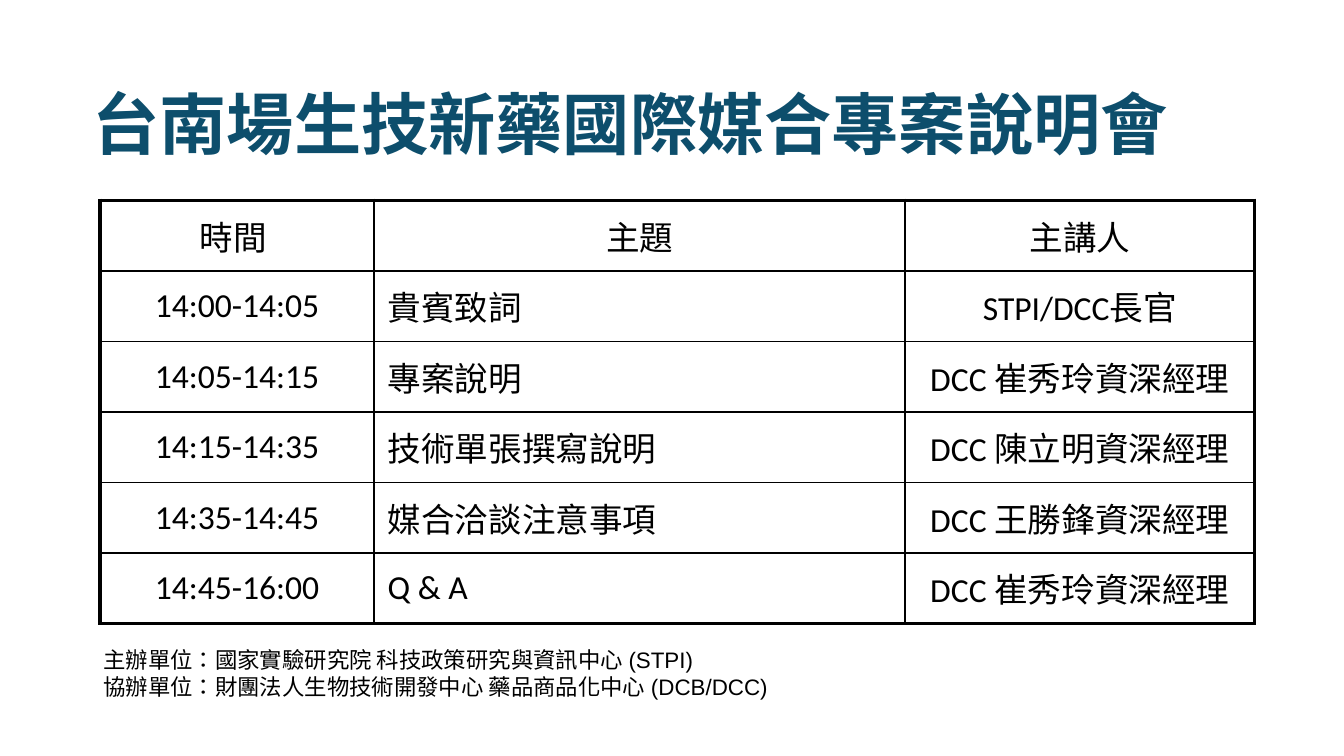
from lxml import etree
from pptx import Presentation
from pptx.dml.color import RGBColor
from pptx.enum.lang import MSO_LANGUAGE_ID
from pptx.enum.text import MSO_ANCHOR, PP_ALIGN
from pptx.oxml.ns import qn
from pptx.util import Inches, Pt

BLACK = RGBColor(0x00, 0x00, 0x00)
TEAL = RGBColor(0x0D, 0x4E, 0x6C)
LEFT, CENTER = PP_ALIGN.LEFT, PP_ALIGN.CENTER
TOP, MIDDLE, BOTTOM = MSO_ANCHOR.TOP, MSO_ANCHOR.MIDDLE, MSO_ANCHOR.BOTTOM
CHINESE = MSO_LANGUAGE_ID.TRADITIONAL_CHINESE
THIN, THICK = Pt(1), Pt(2.25)

TITLE = "台南場生技新藥國際媒合專案說明會"
SPEAKER = "主講人"
AGENDA = [
    ("時間 ", "主題", SPEAKER),
    ("14:00-14:05", "貴賓致詞", "STPI/DCC長官"),
    ("14:05-14:15", "專案說明", "DCC 崔秀玲資深經理"),
    ("14:15-14:35", "技術單張撰寫說明", "DCC 陳立明資深經理"),
    ("14:35-14:45", "媒合洽談注意事項", "DCC 王勝鋒資深經理"),
    ("14:45-16:00", "Q & A", "DCC 崔秀玲資深經理"),
]
ORGANISERS = [
    "主辦單位：國家實驗研究院 科技政策研究與資訊中心 (STPI)",
    "協辦單位：財團法人生物技術開發中心 藥品商品化中心 (DCB/DCC)",
]


class AgendaSlide:
    """Draws styled elements on one slide, with lengths in percent of its size."""

    def __init__(self, deck):
        self.width, self.height = deck.slide_width, deck.slide_height
        self.shapes = deck.slides.add_slide(deck.slide_layouts[6]).shapes

    def across(self, percent):
        return round(self.width * percent / 100)

    def down(self, percent):
        return round(self.height * percent / 100)

    def area(self, left, top, width, height):
        return self.across(left), self.down(top), self.across(width), self.down(height)

    def style(self, para, size, name="Calibri", color=BLACK, bold=False):
        font = para.font
        font.size, font.name, font.bold = Pt(size), name, bold
        font.color.rgb = color
        for span in para.runs:
            span.font.language_id = CHINESE

    def text(self, area, lines, anchor=TOP, spacing=1.0, **style):
        frame = self.shapes.add_textbox(*self.area(*area)).text_frame
        frame.word_wrap = True
        frame.vertical_anchor = anchor
        frame.text = "\n".join(lines)
        for para in frame.paragraphs:
            para.line_spacing = spacing
            self.style(para, **style)

    def border(self, cell, widths):
        properties = cell._tc.get_or_add_tcPr()
        for side, width in zip("LRTB", widths):
            line = etree.SubElement(properties, qn(f"a:ln{side}"), w=str(width))
            fill = etree.SubElement(line, qn("a:solidFill"))
            etree.SubElement(fill, qn("a:srgbClr"), val=str(BLACK))

    def table(self, area, rows, column_widths):
        last_row, last_column = len(rows) - 1, len(column_widths) - 1
        table = self.shapes.add_table(len(rows), len(column_widths), *self.area(*area)).table
        table.first_row = table.horz_banding = False
        for column, width in zip(table.columns, column_widths):
            column.width = self.across(width)
        for r, texts in enumerate(rows):
            for c, text in enumerate(texts):
                cell = table.cell(r, c)
                cell.text = text
                cell.vertical_anchor = MIDDLE
                para = cell.text_frame.paragraphs[0]
                para.alignment = LEFT if r > 0 and c == 1 else CENTER
                self.style(para, 18, "Arial" if text == SPEAKER else "Calibri")
                outer_edges = (c == 0, c == last_column, r == 0, r == last_row)
                self.border(cell, [THICK if outer else THIN for outer in outer_edges])
                cell.fill.background()


def main():
    deck = Presentation()
    deck.slide_width = Inches(10)
    deck.slide_height = deck.slide_width * 9 // 16
    slide = AgendaSlide(deck)
    slide.text((5.9, 8, 87.4, 14.6), [TITLE], anchor=BOTTOM, spacing=0.9,
               size=36, color=TEAL, bold=True)
    slide.table((7.45, 26.5, 85.9, 56), AGENDA, (20.4, 39.5, 26))
    slide.text((6.7, 84.6, 66.9, 8.9), ORGANISERS, size=12, name="Arial")
    deck.save("out.pptx")


if __name__ == "__main__":
    main()
